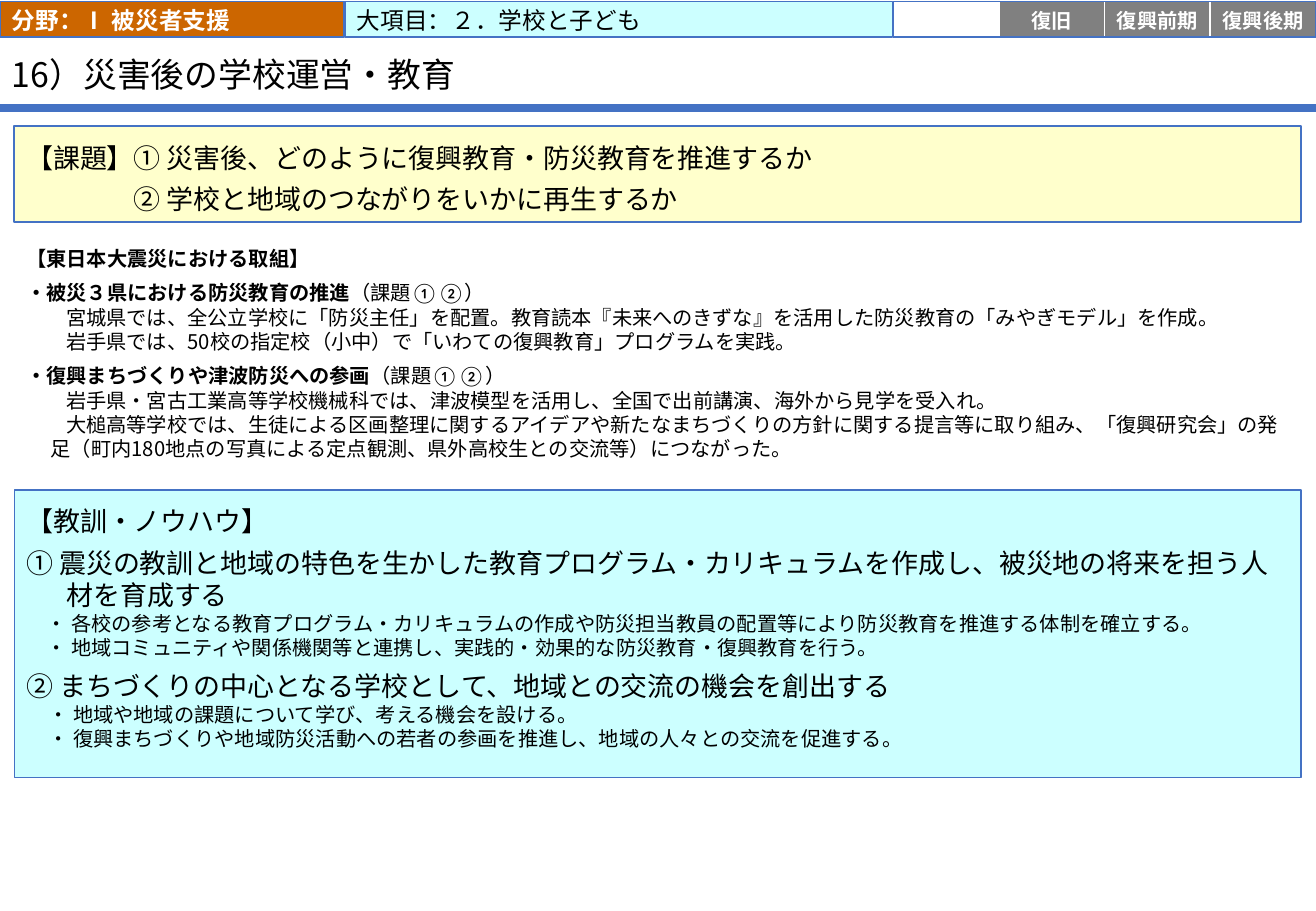
from pptx import Presentation, util as u
from pptx.dml.color import RGBColor
from pptx.enum import shapes, text
from pptx.oxml.ns import qn
from lxml import etree

NOTO, CALI = "Noto Sans CJK JP", "Calibri"
BLUE, BLACK, WHITE = "4472C4", "000000", "FFFFFF"
GREY, ORANGE, CREAM, AQUA = "808080", "CC6600", "FFFFCC", "CCFFFF"
WIDE, TALL = 27.51, 19.05
MID, TOP = text.MSO_ANCHOR.MIDDLE, text.MSO_ANCHOR.TOP
LEFT, CENTRE = text.PP_ALIGN.LEFT, text.PP_ALIGN.CENTER


def tint(code):
    return RGBColor.from_string(code)


class Page:
    def __init__(self, deck, layout):
        self.slide = deck.slides.add_slide(deck.slide_layouts[layout])
        self.items = self.slide.shapes

    def place(self, shape, box):
        shape.left, shape.top, shape.width, shape.height = map(u.Cm, box)

    def paint(self, shape, fill=None, line=None):
        if fill:
            shape.fill.solid()
            shape.fill.fore_color.rgb = tint(fill)
        else:
            shape.fill.background()
        if line:
            shape.line.color.rgb = tint(line)
            shape.line.width = u.Pt(1)
        else:
            shape.line.fill.background()

    def frame(self, shape, inset, anchor=MID):
        body = shape.text_frame
        body.word_wrap = True
        body.auto_size = text.MSO_AUTO_SIZE.NONE
        body.vertical_anchor = anchor
        (body.margin_left, body.margin_top,
         body.margin_right, body.margin_bottom) = map(u.Cm, inset)
        return body

    def style(self, run, size, font=NOTO, color=BLACK, bold=False):
        run.font.size = u.Pt(size)
        run.font.bold = bold
        run.font.color.rgb = tint(color)
        run.font.name = font
        east = etree.Element(qn("a:ea"), typeface=font)
        run.font._element.find(qn("a:latin")).addnext(east)

    def para(self, para, words, size, font=NOTO, color=BLACK, bold=False,
             tail="", left=0, first=0, before=0, lead=1.0, align=LEFT):
        para.text = words
        para.alignment = align
        para.line_spacing = lead
        para.space_before = u.Pt(before)
        para.space_after = u.Pt(0)
        self.style(para.runs[0], size, font, color, bold)
        if tail:
            run = para.add_run()
            run.text = tail
            self.style(run, size, font, color)
        props = para._p.get_or_add_pPr()
        props.set("marL", str(int(u.Cm(left))))
        props.set("indent", str(int(u.Cm(first))))
        if props.find(qn("a:buNone")) is None:
            etree.SubElement(props, qn("a:buNone"))

    def fill(self, body, rows):
        for i, (words, look) in enumerate(rows):
            para = body.paragraphs[0] if i == 0 else body.add_paragraph()
            self.para(para, words, **look)

    def title(self, words, box):
        shape = self.items.title
        self.place(shape, box)
        body = self.frame(shape, (0.25, 0.1, 0.25, 0))
        self.para(body.paragraphs[0], words, 20, lead=0.9)

    def list(self, slot, box, inset, rows, fill, line=None, anchor=MID):
        shape = self.slide.placeholders[slot]
        self.place(shape, box)
        self.paint(shape, fill, line)
        self.fill(self.frame(shape, inset, anchor), rows)

    def panel(self, box, fill=None, line=None, inset=(0.25, 0.05, 0.25, 0), rows=()):
        shape = self.items.add_shape(shapes.MSO_SHAPE.RECTANGLE, *map(u.Cm, box))
        shape.shadow.inherit = False
        self.paint(shape, fill, line)
        self.fill(self.frame(shape, inset), rows)

    def rule(self, y, color, width):
        line = self.items.add_connector(
            shapes.MSO_CONNECTOR.STRAIGHT, 0, u.Cm(y), u.Cm(WIDE), u.Cm(y))
        line.line.color.rgb = tint(color)
        line.line.width = u.Pt(width)
        etree.SubElement(line._element.spPr, qn("a:effectLst"))


def main():
    deck = Presentation()
    deck.slide_width, deck.slide_height = u.Cm(WIDE), u.Cm(TALL)
    page = Page(deck, 3)
    edge, span = 0.3, 26.9

    page.rule(2.26, BLUE, 4.5)
    page.title("16）災害後の学校運営・教育", (0, 0.81, 24.08, 1.47))

    small = dict(size=12, lead=u.Pt(14.4))
    large = dict(size=16, lead=u.Pt(19.2))
    head = dict(small, font=CALI, bold=True)
    topic = dict(head, before=6, tail="（課題①②）")
    plain = dict(small, left=0.51, first=0.32)
    page.list(1, (edge, 4.75, span, 5.28), (0.25, 0.13, 0.25, 0.13), [
        ("【東日本大震災における取組】", head),
        ("・被災３県における防災教育の推進", topic),
        ("宮城県では、全公立学校に「防災主任」を配置。教育読本『未来へのきずな』を活用した防災教育の「みやぎモデル」を作成。", plain),
        ("岩手県では、50校の指定校（小中）で「いわての復興教育」プログラムを実践。", plain),
        ("・復興まちづくりや津波防災への参画", topic),
        ("岩手県・宮古工業高等学校機械科では、津波模型を活用し、全国で出前講演、海外から見学を受入れ。", plain),
        ("大槌高等学校では、生徒による区画整理に関するアイデアや新たなまちづくりの方針に関する提言等に取り組み、「復興研究会」の発足（町内180地点の写真による定点観測、県外高校生との交流等）につながった。", plain),
    ], WHITE)

    lesson = dict(large, left=0.84, first=-0.84, before=6)
    point = dict(small, left=1.04, first=-0.62)
    note = dict(point, first=-0.58)
    page.list(2, (edge, 10.24, span, 6.02), (0.25, 0.3, 0.25, 0), [
        ("【教訓・ノウハウ】", large),
        ("① 震災の教訓と地域の特色を生かした教育プログラム・カリキュラムを作成し、被災地の将来を担う人材を育成する", lesson),
        ("・ 各校の参考となる教育プログラム・カリキュラムの作成や防災担当教員の配置等により防災教育を推進する体制を確立する。", point),
        ("・ 地域コミュニティや関係機関等と連携し、実践的・効果的な防災教育・復興教育を行う。", point),
        ("② まちづくりの中心となる学校として、地域との交流の機会を創出する", lesson),
        ("・ 地域や地域の課題について学び、考える機会を設ける。", note),
        ("・ 復興まちづくりや地域防災活動への若者の参画を推進し、地域の人々との交流を促進する。", note),
    ], AQUA, BLUE, TOP)

    task = dict(size=16, lead=u.Pt(24))
    page.panel((edge, 2.64, span, 2.01), CREAM, BLUE, (0.25, 0.3, 0.25, 0.3), [
        ("【課題】① 災害後、どのように復興教育・防災教育を推進するか", task),
        ("② 学校と地域のつながりをいかに再生するか", dict(task, left=2.25)),
    ])

    top, high = 0.03, 0.74
    label = dict(size=14, font=CALI)
    page.panel((0, top, 7.19, high), ORANGE, BLUE, rows=[
        ("分野：Ⅰ 被災者支援", dict(label, color=WHITE, bold=True))])
    page.panel((7.21, top, 11.51, high), AQUA, BLUE, rows=[
        ("大項目：２．学校と子ども", label)])

    start, step = 18.67, 2.21
    phase = dict(size=12, font=CALI, color=WHITE, bold=True, align=CENTRE)
    phases = ["", "復旧", "復興前期", "復興後期"]
    for i, name in enumerate(phases):
        page.panel((start + i * step, top, step, high), GREY if name else WHITE,
                   WHITE, (0, 0.05, 0, 0), [(name, phase)] if name else [])
    page.panel((start, top, step * len(phases), high), line=BLUE)

    deck.save("out.pptx")


if __name__ == "__main__":
    main()
